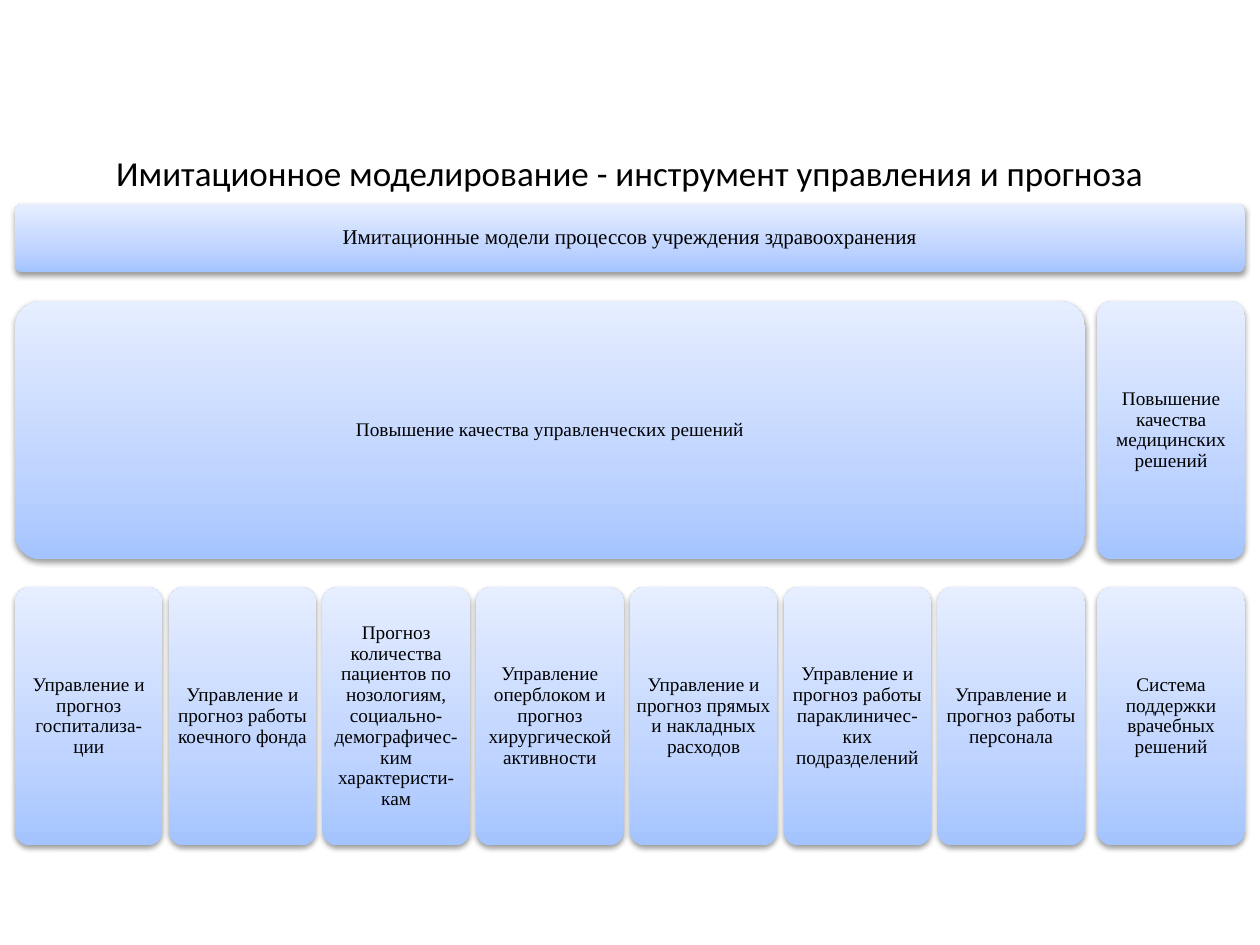
from copy import deepcopy

from lxml.etree import SubElement
from pptx import Presentation
from pptx.dml.color import RGBColor
from pptx.enum.shapes import MSO_SHAPE as SHAPE
from pptx.enum.text import MSO_ANCHOR as ANCHOR, MSO_AUTO_SIZE as AUTO_SIZE, PP_ALIGN as ALIGN
from pptx.oxml.ns import qn
from pptx.util import Inches, Pt

BLACK = RGBColor(0x00, 0x00, 0x00)
CARD_STOPS = [
    (0, RGBColor(0xA4, 0xC4, 0xFF)),
    (0.35, RGBColor(0xBF, 0xD4, 0xFF)),
    (1, RGBColor(0xE6, 0xEE, 0xFF)),
]
CORNER = 0.1

TITLE = "Имитационное моделирование - инструмент управления и прогноза"
MODELS = "Имитационные модели процессов учреждения здравоохранения"
MANAGEMENT = "Повышение качества управленческих решений"
MANAGEMENT_TASKS = [
    "Управление и прогноз госпитализа-ции",
    "Управление и прогноз работы коечного фонда",
    "Прогноз количества пациентов по нозологиям, "
    "социально-демографичес-ким характеристи-кам",
    "Управление оперблоком и прогноз хирургической активности",
    "Управление и прогноз прямых и накладных расходов",
    "Управление и прогноз работы параклиничес-ких подразделений",
    "Управление и прогноз работы персонала",
]
MEDICINE = "Повышение качества медицинских решений"
MEDICINE_TASKS = ["Система поддержки врачебных решений"]

# Grid of the hierarchy, in inches
CARD_W, CARD_H = 1.17, 2.05
COLUMN_GAP, ROW_GAP = 0.05, 0.22


def write(frame, text, font_name, size):
    paragraph = frame.paragraphs[0]
    paragraph.alignment = ALIGN.CENTER
    run = paragraph.add_run()
    run.text = text
    run.font.name = font_name
    run.font.size = Pt(size)
    run.font.color.rgb = BLACK
    return paragraph


def fill_card(card):
    card.fill.gradient()
    card.fill.gradient_angle = 90
    stop_list = card._element.spPr.find(qn("a:gradFill")).find(qn("a:gsLst"))
    stop_list.append(deepcopy(stop_list[-1]))
    for stop, (position, color) in zip(card.fill.gradient_stops, CARD_STOPS):
        stop.position = position
        stop.color.rgb = color


def add_card_shadow(card):
    card.shadow.inherit = False
    effects = card._element.spPr.find(qn("a:effectLst"))
    shadow = SubElement(effects, qn("a:outerShdw"), blurRad=str(Pt(3.1)),
                        dist=str(Pt(1.6)), dir="5400000", rotWithShape="0")
    color = SubElement(shadow, qn("a:srgbClr"), val=str(BLACK))
    SubElement(color, qn("a:alpha"), val="38000")


def add_card(slide, left, top, width, height, text, size=11):
    card = slide.shapes.add_shape(SHAPE.ROUNDED_RECTANGLE, Inches(left), Inches(top),
                                  Inches(width), Inches(height))
    card.adjustments[0] = CORNER
    fill_card(card)
    card.line.fill.background()
    add_card_shadow(card)

    frame = card.text_frame
    frame.word_wrap = True
    frame.vertical_anchor = ANCHOR.MIDDLE
    # The rounded corners already push the text inwards
    margin = Inches(max(0, 0.05 - 0.29 * CORNER * min(width, height)))
    frame.margin_left = frame.margin_right = margin
    frame.margin_top = frame.margin_bottom = margin
    write(frame, text, "Times New Roman", size).line_spacing = 0.9


def add_title(slide, left, top, width, height):
    title = slide.shapes.title
    title.left, title.top = Inches(left), Inches(top)
    title.width, title.height = Inches(width), Inches(height)
    frame = title.text_frame
    frame.auto_size = AUTO_SIZE.NONE
    frame.word_wrap = True
    frame.vertical_anchor = ANCHOR.TOP
    write(frame, TITLE, "Calibri", 20)


def add_branch(slide, left, top, goal, tasks):
    """A goal card over a row of task cards; returns the right edge."""
    pitch = CARD_W + COLUMN_GAP
    width = len(tasks) * pitch - COLUMN_GAP
    add_card(slide, left, top, width, CARD_H, goal)
    for column, task in enumerate(tasks):
        add_card(slide, left + column * pitch, top + CARD_H + ROW_GAP,
                 CARD_W, CARD_H, task)
    return left + width


def add_hierarchy(slide, left, top, width):
    # Root bar
    root_height = 0.54
    add_card(slide, left, top, width, root_height, MODELS, size=12)
    # Two branches
    branch_top = top + root_height + ROW_GAP + 0.01
    right = add_branch(slide, left, branch_top, MANAGEMENT, MANAGEMENT_TASKS)
    add_branch(slide, right + 2 * COLUMN_GAP, branch_top, MEDICINE, MEDICINE_TASKS)


def main():
    deck = Presentation()
    deck.slide_width, deck.slide_height = Inches(10), Inches(7.5)
    slide = deck.slides.add_slide(deck.slide_layouts[5])
    add_title(slide, 0.69, 1.15, 8.62, 0.7)
    add_hierarchy(slide, 0.12, 1.62, 9.76)
    deck.save("out.pptx")


if __name__ == "__main__":
    main()
